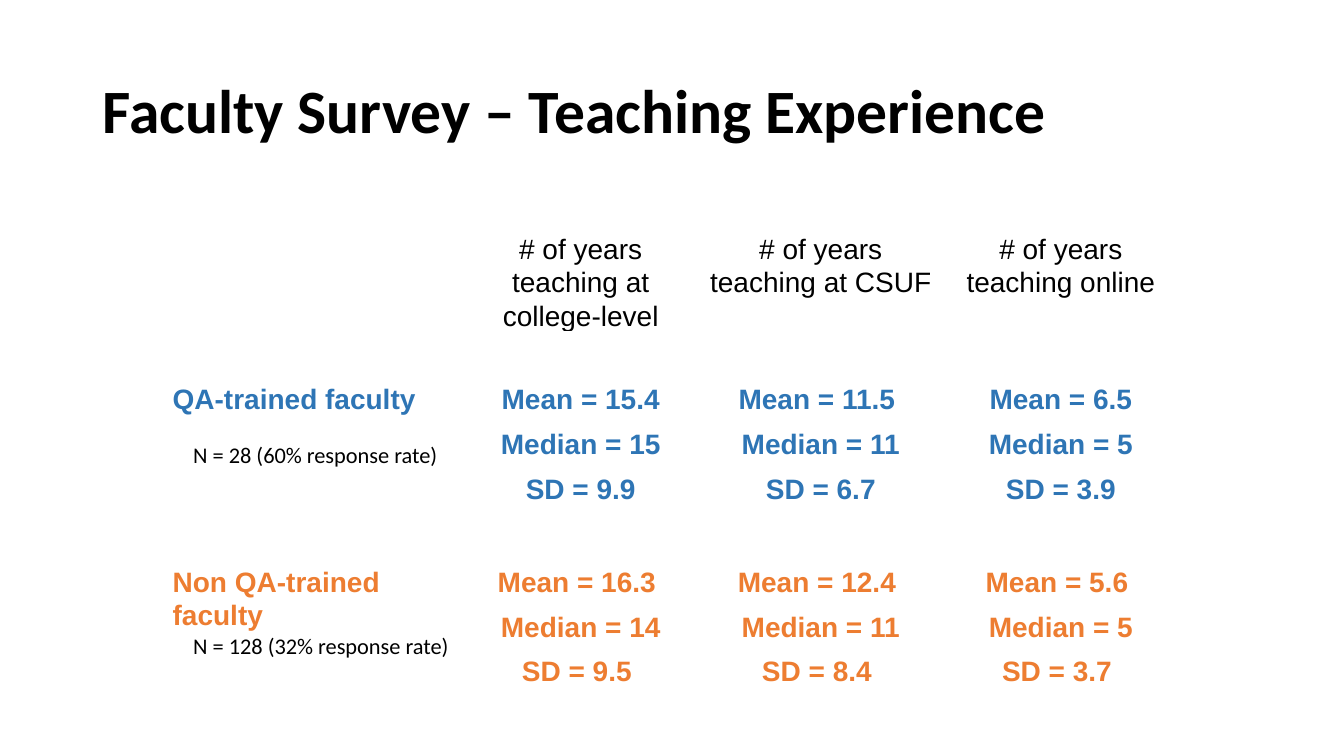
"""Build the slide on teaching experience in the faculty survey."""
from pptx import Presentation
from pptx.dml.color import RGBColor
from pptx.enum.text import MSO_ANCHOR, MSO_AUTO_SIZE, PP_ALIGN
from pptx.util import Cm, Pt

COLORS = {"text": "000000", "trained": "2E75B5", "untrained": "ED7D31"}
COLUMN_WIDTHS = [7.44, 6.05, 6.05, 6.05]
ROW_HEIGHTS = [1.8, 1.27, 3.33, 1.27, 4.52]
HEADERS = [
    "# of years teaching at college-level",
    "# of years teaching at CSUF",
    "# of years teaching online",
]
GROUPS = [
    (2, "trained", "QA-trained faculty", [
        ["Mean = 15.4", "Median = 15", "SD = 9.9"],
        ["Mean = 11.5 ", "Median = 11", "SD = 6.7"],
        ["Mean = 6.5", "Median = 5", "SD = 3.9"],
    ]),
    (4, "untrained", "Non QA-trained faculty", [
        ["Mean = 16.3 ", "Median = 14", "SD = 9.5 "],
        ["Mean = 12.4 ", "Median = 11", "SD = 8.4 "],
        ["Mean = 5.6 ", "Median = 5", "SD = 3.7 "],
    ]),
]
NOTES = [(11, "N = 28 (60% response rate)"), (15.8, "N = 128 (32% response rate)")]


def add_run(paragraph, text, size, font_name, color, bold=False):
    """Add one formatted run to a paragraph."""
    run = paragraph.add_run()
    run.text = text
    run.font.size = Pt(size)
    run.font.name = font_name
    run.font.bold = bold
    run.font.color.rgb = RGBColor.from_string(COLORS[color])


def set_title(slide, text):
    """Place and format the title placeholder."""
    title = slide.shapes.title
    title.left, title.top, title.width, title.height = Cm(2.33), Cm(1.01), Cm(29.21), Cm(3.68)
    frame = title.text_frame
    frame.auto_size = MSO_AUTO_SIZE.NONE
    frame.vertical_anchor = MSO_ANCHOR.MIDDLE
    paragraph = frame.paragraphs[0]
    paragraph.alignment = PP_ALIGN.LEFT
    paragraph.line_spacing = 0.9
    add_run(paragraph, text, 44, "Calibri", "text", bold=True)


def fill_cell(cell, lines, color, alignment=PP_ALIGN.CENTER, bold=True):
    """Write lines into a table cell, one paragraph each."""
    for index, line in enumerate(lines):
        frame = cell.text_frame
        paragraph = frame.add_paragraph() if index else frame.paragraphs[0]
        paragraph.alignment = alignment
        paragraph.line_spacing = 1.07
        if index:
            paragraph.space_before = Pt(8)
        add_run(paragraph, line, 20, "Arial", color, bold)


def add_plain_table(slide):
    """Add an unfilled table with the planned rows and columns."""
    frame = slide.shapes.add_table(
        len(ROW_HEIGHTS), len(COLUMN_WIDTHS), Cm(4.17), Cm(5.84),
        Cm(sum(COLUMN_WIDTHS)), Cm(sum(ROW_HEIGHTS)))
    table = frame.table
    table.first_row = table.horz_banding = False
    for column, width in zip(table.columns, COLUMN_WIDTHS):
        column.width = Cm(width)
    for row, height in zip(table.rows, ROW_HEIGHTS):
        row.height = Cm(height)
    for cell in table.iter_cells():
        cell.fill.background()
        cell.margin_left = cell.margin_right = Cm(0.18)
        cell.margin_top = cell.margin_bottom = Cm(0)
    return table


def add_experience_table(slide):
    """Add the table of teaching years for both faculty groups."""
    table = add_plain_table(slide)
    for column, header in enumerate(HEADERS, start=1):
        fill_cell(table.cell(0, column), [header], "text", bold=False)
    for row, color, name, statistics in GROUPS:
        fill_cell(table.cell(row, 0), [name], color, PP_ALIGN.LEFT)
        for column, lines in enumerate(statistics, start=1):
            fill_cell(table.cell(row, column), lines, color)


def add_note(slide, top, text):
    """Add a response rate note beneath a group name."""
    box = slide.shapes.add_textbox(Cm(4.62), Cm(top), Cm(7.85), Cm(0.94))
    box.text_frame.word_wrap = True
    add_run(box.text_frame.paragraphs[0], text, 16, "Calibri", "text")


def main():
    """Build and save the presentation."""
    presentation = Presentation()
    presentation.slide_width, presentation.slide_height = Cm(33.87), Cm(19.05)
    slide = presentation.slides.add_slide(presentation.slide_layouts[5])
    set_title(slide, "Faculty Survey – Teaching Experience")
    add_experience_table(slide)
    for top, text in NOTES:
        add_note(slide, top, text)
    presentation.save("out.pptx")


if __name__ == "__main__":
    main()
